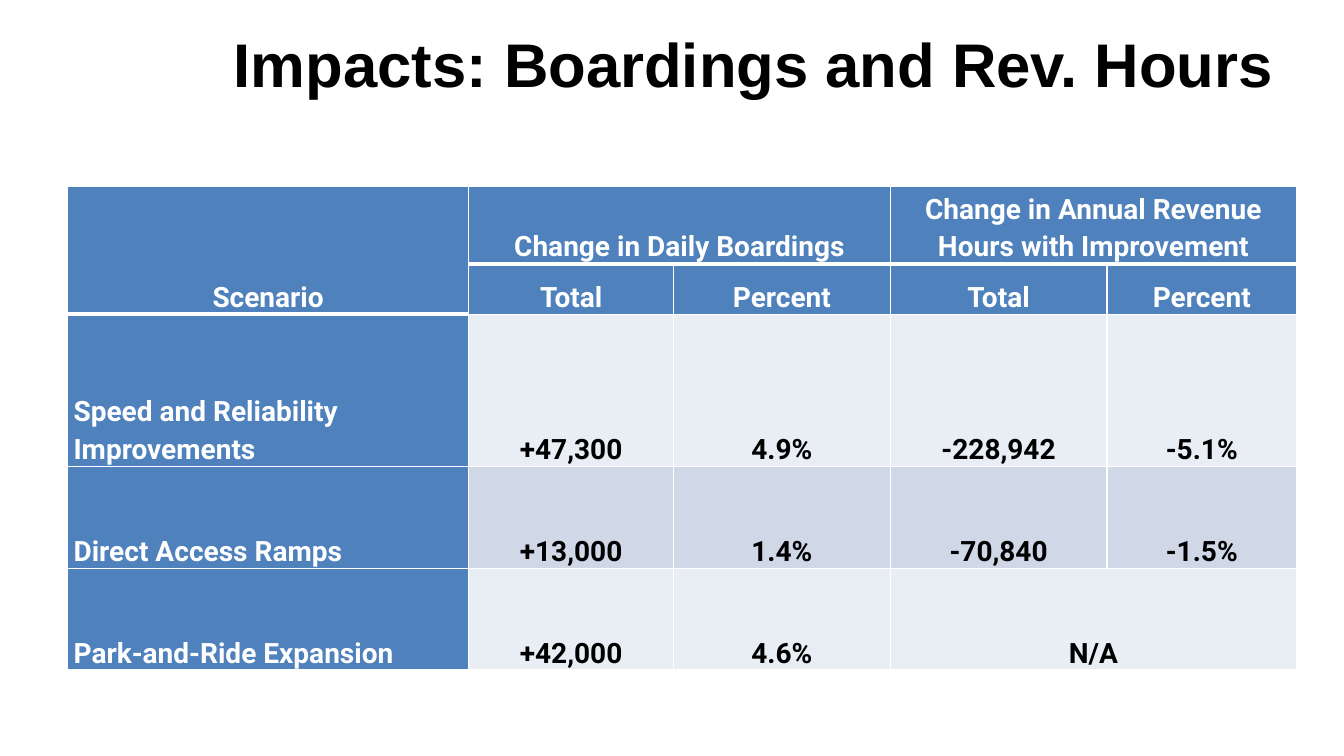
from lxml.etree import SubElement
from pptx import Presentation
from pptx.dml.color import RGBColor
from pptx.enum.text import MSO_ANCHOR, PP_ALIGN
from pptx.oxml.ns import qn
from pptx.util import Inches, Pt

HEADER_BLUE = "4F81BD"
BANDS = ("E9EDF4", "D0D8E8")
COLUMN_WIDTHS = (3.98, 2.03, 2.15, 2.15, 1.88)
ROW_HEIGHTS = (0.76, 0.5, 1.51, 1.01, 1.01)
HEADER_ROWS = 2
IMPACTS = (
    ("Scenario", "Change in Daily Boardings", "",
     "Change in Annual Revenue Hours with Improvement", ""),
    ("", "Total", "Percent", "Total", "Percent"),
    ("Speed and Reliability Improvements", "+47,300", "4.9%", "-228,942", "-5.1%"),
    ("Direct Access Ramps", "+13,000", "1.4%", "-70,840", "-1.5%"),
    ("Park-and-Ride Expansion", "+42,000", "4.6%", "N/A", ""),
)
MERGES = (((0, 0), (1, 0)), ((0, 1), (0, 2)), ((0, 3), (0, 4)), ((4, 3), (4, 4)))


def rgb(color):
    return RGBColor.from_string(color)


def write(paragraph, text, font_name, size, color, align):
    paragraph.alignment = align
    run = paragraph.add_run()
    run.text = text
    run.font.name = font_name
    run.font.size = Pt(size)
    run.font.bold = True
    run.font.color.rgb = rgb(color)


def add_title(slide, left, top, width, height):
    title = slide.shapes.add_textbox(
        Inches(left), Inches(top), Inches(width), Inches(height)).text_frame
    title.word_wrap = True
    title.vertical_anchor = MSO_ANCHOR.MIDDLE
    write(title.paragraphs[0], "Impacts: Boardings and Rev. Hours",
          "Arial", 44, "000000", PP_ALIGN.CENTER)


def rule_below(row, column):
    return 3 if row == 0 or (row, column) == (1, 0) else 1


def add_borders(cell, row, column):
    properties = cell._tc.get_or_add_tcPr()
    above = rule_below(row - 1, column) if row else 1
    widths = {"L": 1, "R": 1, "T": above, "B": rule_below(row, column)}
    for side, width in widths.items():
        border = SubElement(properties, qn(f"a:ln{side}"), w=str(Pt(width)))
        fill = SubElement(border, qn("a:solidFill"))
        SubElement(fill, qn("a:srgbClr"), val="FFFFFF")


def format_cell(cell, row, column):
    is_header = row < HEADER_ROWS or column == 0
    add_borders(cell, row, column)
    cell.fill.solid()
    cell.fill.fore_color.rgb = rgb(HEADER_BLUE if is_header else BANDS[row % 2])
    cell.vertical_anchor = MSO_ANCHOR.BOTTOM
    cell.margin_left = cell.margin_right = Inches(0.06)
    cell.margin_top = cell.margin_bottom = 0
    text = IMPACTS[row][column]
    if text:
        is_scenario = row >= HEADER_ROWS and column == 0
        paragraph = cell.text_frame.paragraphs[0]
        paragraph.line_spacing = 1.15
        write(paragraph, text, "Roboto", 20, "FFFFFF" if is_header else "000000",
              PP_ALIGN.LEFT if is_scenario else PP_ALIGN.CENTER)


def add_impacts_table(slide, left, top):
    impacts = slide.shapes.add_table(
        len(ROW_HEIGHTS), len(COLUMN_WIDTHS), Inches(left), Inches(top),
        Inches(sum(COLUMN_WIDTHS)), Inches(sum(ROW_HEIGHTS))).table
    for column, width in zip(impacts.columns, COLUMN_WIDTHS):
        column.width = Inches(width)
    for row, height in zip(impacts.rows, ROW_HEIGHTS):
        row.height = Inches(height)
    for first, last in MERGES:
        impacts.cell(*first).merge(impacts.cell(*last))
    for row in range(len(ROW_HEIGHTS)):
        for column in range(len(COLUMN_WIDTHS)):
            format_cell(impacts.cell(row, column), row, column)


def main():
    presentation = Presentation()
    presentation.slide_width = Inches(13.33)
    presentation.slide_height = Inches(7.5)
    slide = presentation.slides.add_slide(presentation.slide_layouts[6])
    add_title(slide, 1.63, 0, 11.7, 1.25)
    add_impacts_table(slide, 0.67, 1.85)
    presentation.save("out.pptx")


if __name__ == "__main__":
    main()
